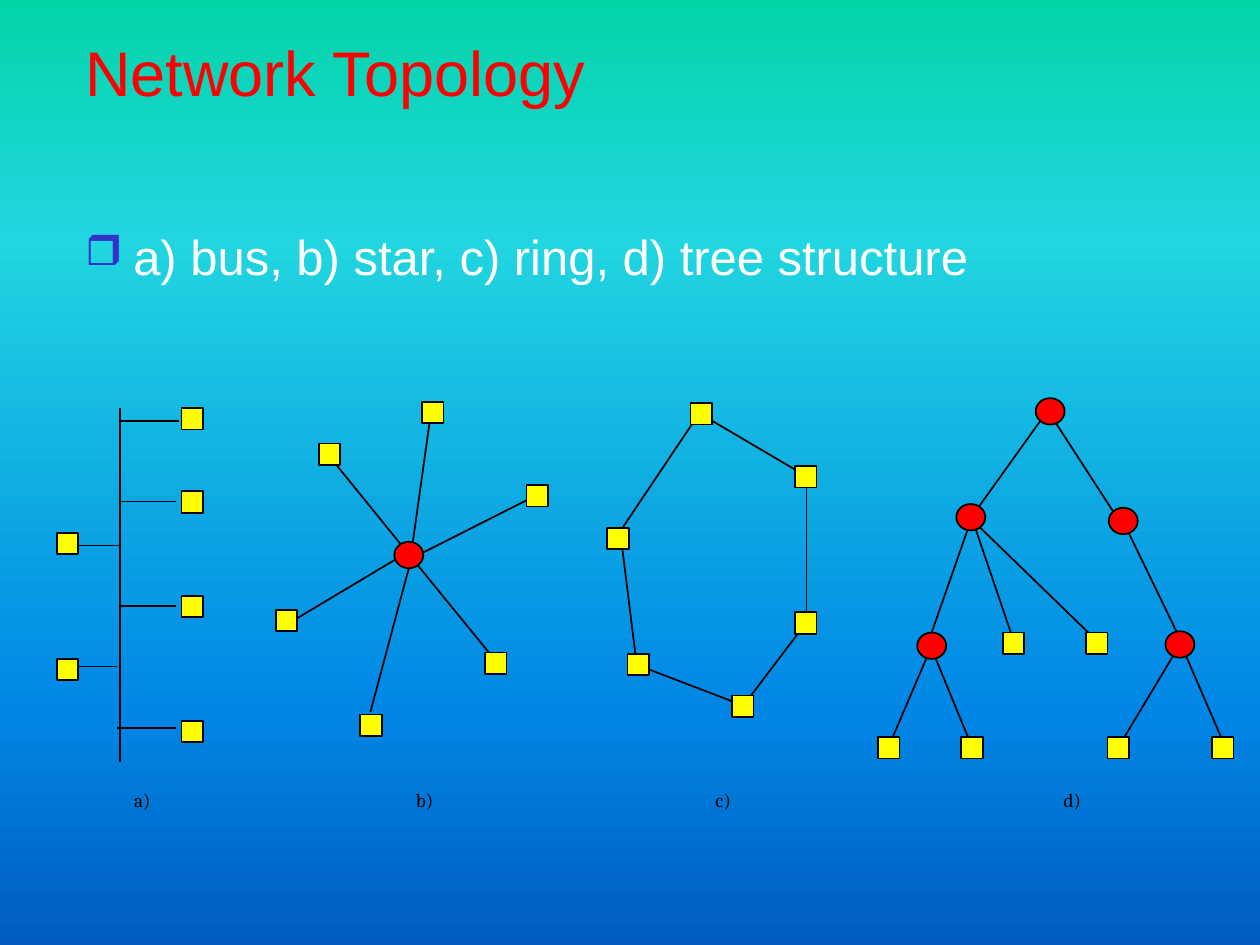
import pptx
import pptx.util
import pptx.dml.color
import pptx.enum.shapes
import pptx.enum.text
import pptx.oxml
import pptx.oxml.ns
from pptx.util import Inches

BACKGROUND = [(0, "03D4A8"), (25, "21D6E0"), (75, "0087E6"), (100, "005CBF")]
SQUARE = (0.17, 0.17)
HUB = (0.23, 0.21)

TOPOLOGIES = [
    {
        "label": "a)", "label_left": 0.91,
        "lines": [
            (0.95, 3.24, 0.95, 6.05),
            (1.42, 3.34, 0.95, 3.34), (1.4, 3.98, 0.95, 3.98),
            (0.61, 4.33, 0.96, 4.33), (1.4, 4.81, 0.95, 4.81),
            (0.62, 5.29, 0.93, 5.29), (1.4, 5.78, 0.93, 5.78),
        ],
        "squares": [(1.44, 3.24), (1.44, 3.9), (0.45, 4.23),
                    (1.44, 4.73), (0.45, 5.23), (1.44, 5.72)],
        "hubs": [],
    },
    {
        "label": "b)", "label_left": 3.15,
        "lines": [
            (3.41, 3.35, 3.27, 4.35), (2.67, 3.69, 3.27, 4.43),
            (3.19, 4.41, 2.32, 4.93), (3.25, 4.49, 2.94, 5.65),
            (3.27, 4.43, 3.93, 5.24), (4.28, 3.92, 3.27, 4.43),
        ],
        "squares": [(3.35, 3.19), (2.53, 3.52), (4.18, 3.85),
                    (2.19, 4.84), (3.85, 5.18), (2.86, 5.67)],
        "hubs": [(3.13, 4.3)],
    },
    {
        "label": "c)", "label_left": 5.52,
        "lines": [
            (5.55, 3.28, 6.4, 3.78), (6.4, 3.78, 6.4, 4.9),
            (6.4, 4.94, 5.9, 5.6), (5.09, 5.29, 5.9, 5.6),
            (4.93, 4.28, 5.05, 5.25), (5.55, 3.28, 4.9, 4.25),
        ],
        "squares": [(5.48, 3.2), (6.31, 3.7), (6.31, 4.86),
                    (5.81, 5.52), (4.98, 5.19), (4.82, 4.19)],
        "hubs": [],
    },
    {
        "label": "d)", "label_left": 8.29,
        "lines": [
            (8.3, 3.28, 7.72, 4.09), (8.33, 3.28, 8.88, 4.13),
            (7.72, 4.09, 7.37, 5.09), (7.72, 4.13, 8.06, 5.13),
            (7.72, 4.13, 8.72, 5.1), (8.91, 4.13, 9.38, 5.1),
            (7.41, 5.09, 7.06, 5.91), (7.37, 5.09, 7.72, 5.94),
            (9.38, 5.09, 8.87, 5.94), (9.38, 5.13, 9.73, 5.94),
        ],
        "squares": [(7.96, 5.02), (8.62, 5.02), (6.97, 5.85),
                    (7.63, 5.85), (8.79, 5.85), (9.62, 5.85)],
        "hubs": [(8.22, 3.16), (7.59, 4), (8.8, 4.03), (7.28, 5.02), (9.25, 5.01)],
    },
]


def color(value):
    return pptx.dml.color.RGBColor.from_string(value)


def xml(text):
    return pptx.oxml.parse_xml(text.replace(">", f" {pptx.oxml.ns.nsdecls('a')}>", 1))


def set_background(s):
    fill = s.background.fill
    fill.gradient()
    fill.gradient_angle = 270
    stops = fill.gradient_stops._gsLst
    for gs in list(stops):
        stops.remove(gs)
    for pos, value in BACKGROUND:
        stops.append(xml(f'<a:gs pos="{pos * 1000}"><a:srgbClr val="{value}"/></a:gs>'))


def add_text(s, text, box, size, fill, font="Arial", anchor="TOP", align="LEFT",
             inset=None, before=0, after=0):
    sp = s.shapes.add_textbox(*map(Inches, box))
    tf = sp.text_frame
    tf.word_wrap = True
    tf.vertical_anchor = getattr(pptx.enum.text.MSO_ANCHOR, anchor)
    if inset is not None:
        tf.margin_left = tf.margin_right = tf.margin_top = tf.margin_bottom = Inches(inset)
    p = tf.paragraphs[0]
    p.alignment = getattr(pptx.enum.text.PP_ALIGN, align)
    p.space_before = pptx.util.Pt(before)
    p.space_after = pptx.util.Pt(after)
    r = p.add_run()
    r.text = text
    r.font.size = pptx.util.Pt(size)
    r.font.name = font
    r.font.color.rgb = color(fill)
    return p


def add_bullet(p, char, fill, percent, indent):
    pPr = p._p.get_or_add_pPr()
    pPr.set("marL", str(Inches(indent)))
    pPr.set("indent", str(-Inches(indent)))
    pPr.append(xml(f'<a:buClr><a:srgbClr val="{fill}"/></a:buClr>'))
    pPr.append(xml(f'<a:buSzPct val="{percent * 1000}"></a:buSzPct>'))
    pPr.append(xml(f'<a:buChar char="{char}"></a:buChar>'))


def set_line(sp):
    sp.line.color.rgb = color("000000")
    sp.line.width = pptx.util.Pt(1)


def add_link(s, ends):
    sp = s.shapes.add_connector(pptx.enum.shapes.MSO_CONNECTOR.STRAIGHT, *map(Inches, ends))
    set_line(sp)
    sp._element.spPr.append(xml("<a:effectLst></a:effectLst>"))


def add_node(s, kind, at, size, fill):
    sp = s.shapes.add_shape(kind, *map(Inches, at + size))
    sp.shadow.inherit = False
    sp.fill.solid()
    sp.fill.fore_color.rgb = color(fill)
    set_line(sp)


def main():
    prs = pptx.Presentation()
    prs.slide_width, prs.slide_height = Inches(10), Inches(7.5)
    s = prs.slides.add_slide(prs.slide_layouts[6])
    set_background(s)

    add_text(s, "Network Topology", (0.58, 0.25, 8.5, 0.64), 36, "FF0000", anchor="MIDDLE")
    p = add_text(s, "a) bus, b) star, c) ring, d) tree structure",
                 (0.58, 1.75, 8.5, 5.08), 28, "FFFFFF", before=5.6)
    add_bullet(p, "❒", "3333CC", 85, 0.38)

    shapes = pptx.enum.shapes.MSO_SHAPE
    for topology in TOPOLOGIES:
        for ends in topology["lines"]:
            add_link(s, ends)
        for at in topology["squares"]:
            add_node(s, shapes.RECTANGLE, at, SQUARE, "FFFF00")
        for at in topology["hubs"]:
            add_node(s, shapes.OVAL, at, HUB, "FF0000")
        add_text(s, topology["label"], (topology["label_left"], 6.26, 0.44, 0.31), 11,
                 "000000", font="Cambria", align="CENTER", inset=0, before=2, after=1)

    prs.save("out.pptx")


if __name__ == "__main__":
    main()
